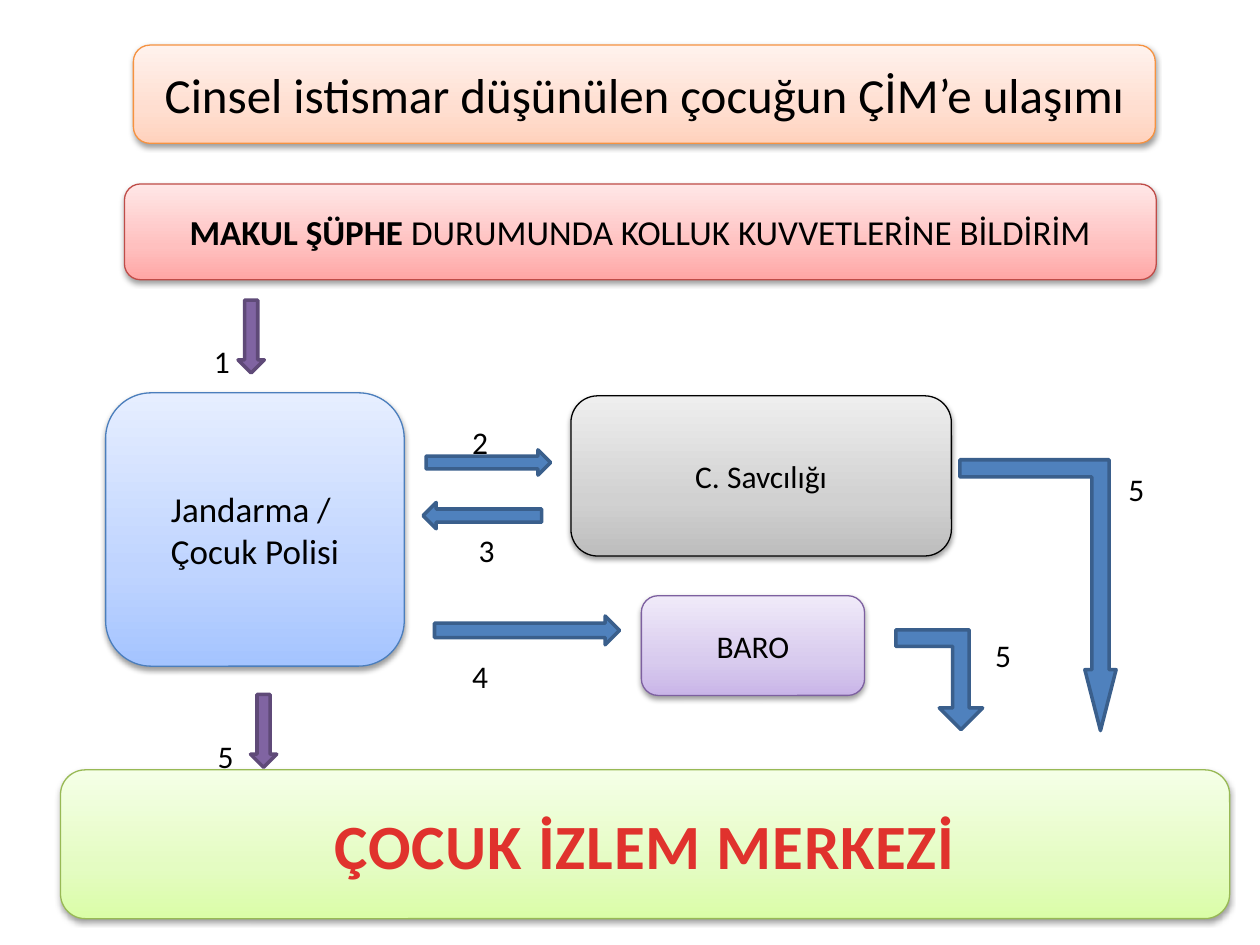
"""Flow of a child's referral to the monitoring centre."""
from copy import deepcopy
from dataclasses import dataclass

from lxml import etree
from pptx import Presentation
from pptx.dml.color import RGBColor
from pptx.enum.shapes import MSO_SHAPE
from pptx.enum.text import MSO_ANCHOR, MSO_AUTO_SIZE, PP_ALIGN
from pptx.oxml.ns import qn
from pptx.util import Cm, Pt

ROUND = MSO_SHAPE.ROUNDED_RECTANGLE
DOWN = MSO_SHAPE.DOWN_ARROW
RIGHT = MSO_SHAPE.RIGHT_ARROW
LEFT = MSO_SHAPE.LEFT_ARROW
BENT = MSO_SHAPE.BENT_UP_ARROW
MIDDLE = MSO_ANCHOR.MIDDLE
CENTER = PP_ALIGN.CENTER
GROW = MSO_AUTO_SIZE.SHAPE_TO_FIT_TEXT

BLACK = RGBColor(0x00, 0x00, 0x00)
RED = RGBColor(0xE0, 0x32, 0x2D)
PURPLE = RGBColor(0x80, 0x64, 0xA2)
PURPLE_LINE = RGBColor(0x5F, 0x4A, 0x78)
BLUE = RGBColor(0x4F, 0x81, 0xBD)
BLUE_LINE = RGBColor(0x3A, 0x5F, 0x8C)
ROSE_LINE = RGBColor(0xBF, 0x4C, 0x48)
ROSE = (RGBColor(0xFF, 0xA6, 0xA5), RGBColor(0xFF, 0xC0, 0xBF), RGBColor(0xFF, 0xE7, 0xE7))
ORANGE_LINE = RGBColor(0xF6, 0x92, 0x40)
ORANGE = (RGBColor(0xFF, 0xD2, 0xBD), RGBColor(0xFF, 0xDE, 0xD0), RGBColor(0xFF, 0xF2, 0xED))
GREEN_LINE = RGBColor(0x98, 0xB9, 0x55)
GREEN = (RGBColor(0xDA, 0xFD, 0xA7), RGBColor(0xE4, 0xFC, 0xC2), RGBColor(0xF5, 0xFF, 0xE7))
SKY_LINE = RGBColor(0x4B, 0x7E, 0xBC)
SKY = (RGBColor(0xA4, 0xC4, 0xFF), RGBColor(0xBF, 0xD4, 0xFF), RGBColor(0xE6, 0xEE, 0xFF))
GREY = (RGBColor(0xBD, 0xBD, 0xBD), RGBColor(0xD1, 0xD1, 0xD1), RGBColor(0xEE, 0xEE, 0xEE))
LILAC_LINE = RGBColor(0x7D, 0x60, 0xA0)
LILAC = (RGBColor(0xC9, 0xB5, 0xE8), RGBColor(0xD8, 0xCB, 0xEE), RGBColor(0xF0, 0xEA, 0xF9))
STOPS = (0, 0.35, 1)


@dataclass
class Box:
    """Rounded box; each paragraph is a list of (text, bold) runs."""
    at: tuple
    stops: tuple
    line: RGBColor
    size: int
    paragraphs: list
    color: RGBColor = BLACK
    spacing: int = 0


@dataclass
class Arrow:
    """Block arrow with optional vertical flip and adjustments."""
    kind: int
    at: tuple
    fill: RGBColor = BLUE
    line: RGBColor = BLUE_LINE
    flip: bool = False
    adjust: tuple = ()


BOXES = [
    Box((2.51, 3.71, 20.8, 1.93), ROSE, ROSE_LINE, 20,
        [[("MAKUL ŞÜPHE ", True), ("DURUMUNDA KOLLUK KUVVETLERİNE BİLDİRİM", False)]]),
    Box((2.69, 0.91, 20.6, 1.98), ORANGE, ORANGE_LINE, 28,
        [[("Cinsel istismar düşünülen çocuğun ÇİM’e ulaşımı", False)]]),
    Box((1.22, 15.52, 23.57, 3), GREEN, GREEN_LINE, 36,
        [[("ÇOCUK İZLEM MERKEZİ", True)]], RED, 50),
    Box((2.13, 7.92, 6.02, 5.51), SKY, SKY_LINE, 20,
        [[("Jandarma / ", False)], [("Çocuk Polisi", False)]]),
    Box((11.51, 7.98, 7.67, 3.23), GREY, BLACK, 18, [[("C. Savcılığı", False)]]),
    Box((12.93, 12.01, 4.5, 2.01), LILAC, LILAC_LINE, 18, [[("BARO", False)]]),
]
ARROWS = [
    Arrow(DOWN, (4.8, 6.05, 0.53, 1.47), PURPLE, PURPLE_LINE),
    Arrow(DOWN, (5.05, 14, 0.53, 1.47), PURPLE, PURPLE_LINE),
    Arrow(RIGHT, (8.59, 9.07, 2.51, 0.51), flip=True),
    Arrow(LEFT, (8.53, 10.13, 2.39, 0.53)),
    Arrow(RIGHT, (8.76, 12.42, 3.73, 0.58), flip=True),
    Arrow(BENT, (18.06, 12.7, 1.75, 2.01), flip=True, adjust=(0.19, 0.25, 0.25)),
    Arrow(BENT, (19.35, 9.27, 3.15, 5.46), flip=True, adjust=(0.11, 0.1, 0.39)),
]
STEPS = [("1", 4.06, 6.78), ("2", 9.27, 8.41), ("3", 9.4, 10.59), ("4", 9.27, 13.13),
         ("5", 22.5, 9.35), ("5", 19.81, 12.7), ("5", 4.14, 14.73)]


def apply(target, values: dict) -> None:
    """Set every attribute named in values."""
    for name, value in values.items():
        setattr(target, name, value)


def add_run(p, text: str, size: int, color: RGBColor = BLACK, bold: bool = False):
    """Append a formatted run to a paragraph."""
    r = p.add_run()
    r.text = text
    apply(r.font, {"name": "Calibri", "size": Pt(size), "bold": bold})
    r.font.color.rgb = color
    return r


def add_shape(s, kind: int, at: tuple, line: RGBColor, width: float):
    """Add an outlined preset shape without shadow."""
    sp = s.shapes.add_shape(kind, *map(Cm, at))
    sp.shadow.inherit = False
    sp.line.color.rgb = line
    sp.line.width = Pt(width)
    return sp


def fill_gradient(sp, colors: tuple) -> None:
    """Fill a shape with a three-stop gradient running upwards."""
    sp.fill.gradient()
    sp.fill.gradient_angle = 90
    stops = sp.fill._fill._gradFill.find(qn("a:gsLst"))
    stops.append(deepcopy(stops[0]))
    for stop, color, position in zip(sp.fill.gradient_stops, colors, STOPS):
        stop.color.rgb = color
        stop.position = position


def add_shadow(sp) -> None:
    """Give a shape a soft shadow below it."""
    effects = sp._element.spPr.find(qn("a:effectLst"))
    shadow = etree.SubElement(effects, qn("a:outerShdw"), blurRad="40000", dist="20000",
                              dir="5400000", rotWithShape="0")
    color = etree.SubElement(shadow, qn("a:srgbClr"), val=str(BLACK))
    etree.SubElement(color, qn("a:alpha"), val="38000")


def add_box(s, box: Box) -> None:
    """Draw a gradient box with centred text."""
    sp = add_shape(s, ROUND, box.at, box.line, 0.75)
    fill_gradient(sp, box.stops)
    add_shadow(sp)
    tf = sp.text_frame
    apply(tf, {"word_wrap": True, "vertical_anchor": MIDDLE})
    for i, runs in enumerate(box.paragraphs):
        p = tf.add_paragraph() if i else tf.paragraphs[0]
        p.alignment = CENTER
        for text, bold in runs:
            r = add_run(p, text, box.size, box.color, bold)
            if box.spacing:
                r.font._element.set("spc", str(box.spacing))


def add_arrow(s, arrow: Arrow) -> None:
    """Draw a block arrow."""
    sp = add_shape(s, arrow.kind, arrow.at, arrow.line, 2)
    sp.fill.solid()
    sp.fill.fore_color.rgb = arrow.fill
    for i, value in enumerate(arrow.adjust):
        sp.adjustments[i] = value
    if arrow.flip:
        sp._element.spPr.xfrm.set("flipV", "1")


def add_step(s, text: str, left: float, top: float) -> None:
    """Draw a step number."""
    tf = s.shapes.add_textbox(Cm(left), Cm(top), Cm(0.86), Cm(1.02)).text_frame
    apply(tf, {"word_wrap": False, "auto_size": GROW})
    add_run(tf.paragraphs[0], text, 18)


def main() -> None:
    """Build and save the slide."""
    prs = Presentation()
    apply(prs, {"slide_width": Cm(25.4), "slide_height": Cm(19.05)})
    s = prs.slides.add_slide(prs.slide_layouts[6])
    for box in BOXES:
        add_box(s, box)
    for arrow in ARROWS:
        add_arrow(s, arrow)
    for step in STEPS:
        add_step(s, *step)
    prs.save("out.pptx")


if __name__ == "__main__":
    main()
